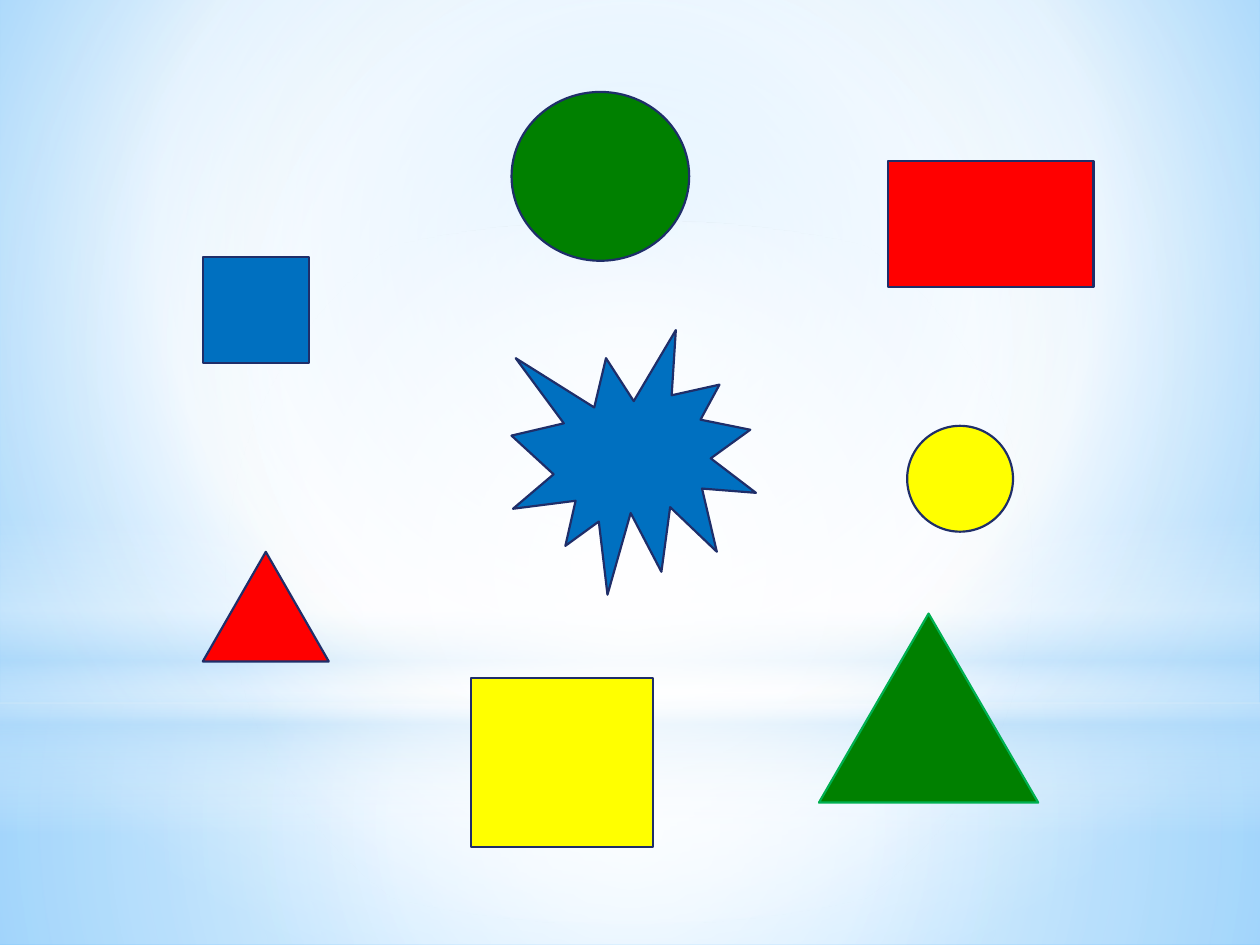
from dataclasses import dataclass

from lxml.etree import SubElement
from pptx import Presentation
from pptx.dml.color import RGBColor
from pptx.enum.shapes import MSO_SHAPE as Shape
from pptx.oxml.ns import qn
from pptx.util import Inches, Pt


@dataclass(frozen=True)
class Theme:
    blue: str = "0070C0"
    red: str = "FF0000"
    yellow: str = "FFFF00"
    green: str = "008000"
    navy: str = "1F2E69"
    bright_green: str = "00B050"
    white: str = "FFFFFF"
    sky: str = "9ED5FF"
    deep_sky: str = "5BB9FF"
    haze: str = "B4DCFA"
    outline: float = 1.25


CENTER = (50, 50, 50, 50)


class SlideBuilder:
    def __init__(self, slide, theme):
        self.slide = slide
        self.theme = theme

    def _gradient(self, owner, stops, focus=None, angle=0):
        """Swap the owner's solid fill for a gradient of (position, colour, opacity)."""
        solid = owner.find(".//" + qn("a:solidFill"))
        grad = solid.makeelement(qn("a:gradFill"), {"rotWithShape": "1"})
        stop_list = SubElement(grad, qn("a:gsLst"))
        for position, color, opacity in stops:
            gs = SubElement(stop_list, qn("a:gs"), pos=str(position * 1000))
            rgb = SubElement(gs, qn("a:srgbClr"), val=color)
            if opacity < 100:
                SubElement(rgb, qn("a:alpha"), val=str(opacity * 1000))
        if focus:
            circle = SubElement(grad, qn("a:path"), {"path": "circle"})
            sides = {side: str(v * 1000) for side, v in zip("ltrb", focus)}
            SubElement(circle, qn("a:fillToRect"), sides)
        else:
            SubElement(grad, qn("a:lin"), ang=str(angle * 60000), scaled="0")
        solid.getparent().replace(solid, grad)

    def _shape(self, kind, box, color):
        sp = self.slide.shapes.add_shape(kind, *map(Inches, box))
        sp.shadow.inherit = False
        sp.fill.solid()
        sp.fill.fore_color.rgb = RGBColor.from_string(color)
        return sp

    def background(self, stops, focus):
        fill = self.slide.background.fill
        fill.solid()
        fill.fore_color.rgb = RGBColor.from_string(self.theme.white)
        self._gradient(self.slide.element, stops, focus)

    def glow(self, kind, box, stops, focus=None, angle=0):
        sp = self._shape(kind, box, self.theme.white)
        sp.line.fill.background()
        self._gradient(sp.element, stops, focus, angle)

    def figure(self, kind, box, color, outline=None):
        sp = self._shape(kind, box, color)
        sp.line.color.rgb = RGBColor.from_string(outline or self.theme.navy)
        sp.line.width = Pt(self.theme.outline)


def main():
    prs = Presentation()
    prs.slide_width, prs.slide_height = Inches(10), Inches(7.5)
    t = Theme()
    s = SlideBuilder(prs.slides.add_slide(prs.slide_layouts[6]), t)

    s.background([(0, t.sky, 100), (60, t.white, 100), (100, t.deep_sky, 100)],
                 (20, 10, 20, 60))
    s.glow(Shape.RECTANGLE, (0, 5.58, 10, 1.92),
           [(0, t.white, 91), (37, t.white, 76), (100, t.haze, 79)], CENTER)
    s.glow(Shape.RECTANGLE, (0, 0, 10, 5.58),
           [(0, t.white, 89), (48, t.white, 62), (100, t.haze, 79)], CENTER)
    s.glow(Shape.RECTANGLE, (0, 4.12, 10, 2.5),
           [(0, t.white, 0), (29, t.white, 30), (45, t.haze, 40),
            (55, t.white, 26), (65, t.haze, 60), (100, t.white, 0)], angle=90)
    s.glow(Shape.OVAL, (0, 1.75, 10, 5.58),
           [(0, t.white, 100), (56, t.white, 0)], CENTER)

    s.figure(Shape.EXPLOSION1, (4.06, 2.62, 1.94, 2.1), t.blue)
    s.figure(Shape.RECTANGLE, (1.61, 2.04, 0.84, 0.84), t.blue)
    s.figure(Shape.ISOSCELES_TRIANGLE, (1.61, 4.38, 1, 0.87), t.red)
    s.figure(Shape.RECTANGLE, (7.05, 1.28, 1.63, 1), t.red)
    s.figure(Shape.OVAL, (7.2, 3.38, 0.84, 0.84), t.yellow)
    s.figure(Shape.OVAL, (4.06, 0.73, 1.41, 1.34), t.green)
    s.figure(Shape.RECTANGLE, (3.74, 5.38, 1.44, 1.34), t.yellow)
    s.figure(Shape.ISOSCELES_TRIANGLE, (6.5, 4.87, 1.74, 1.5), t.green, t.bright_green)

    prs.save("out.pptx")


if __name__ == "__main__":
    main()
